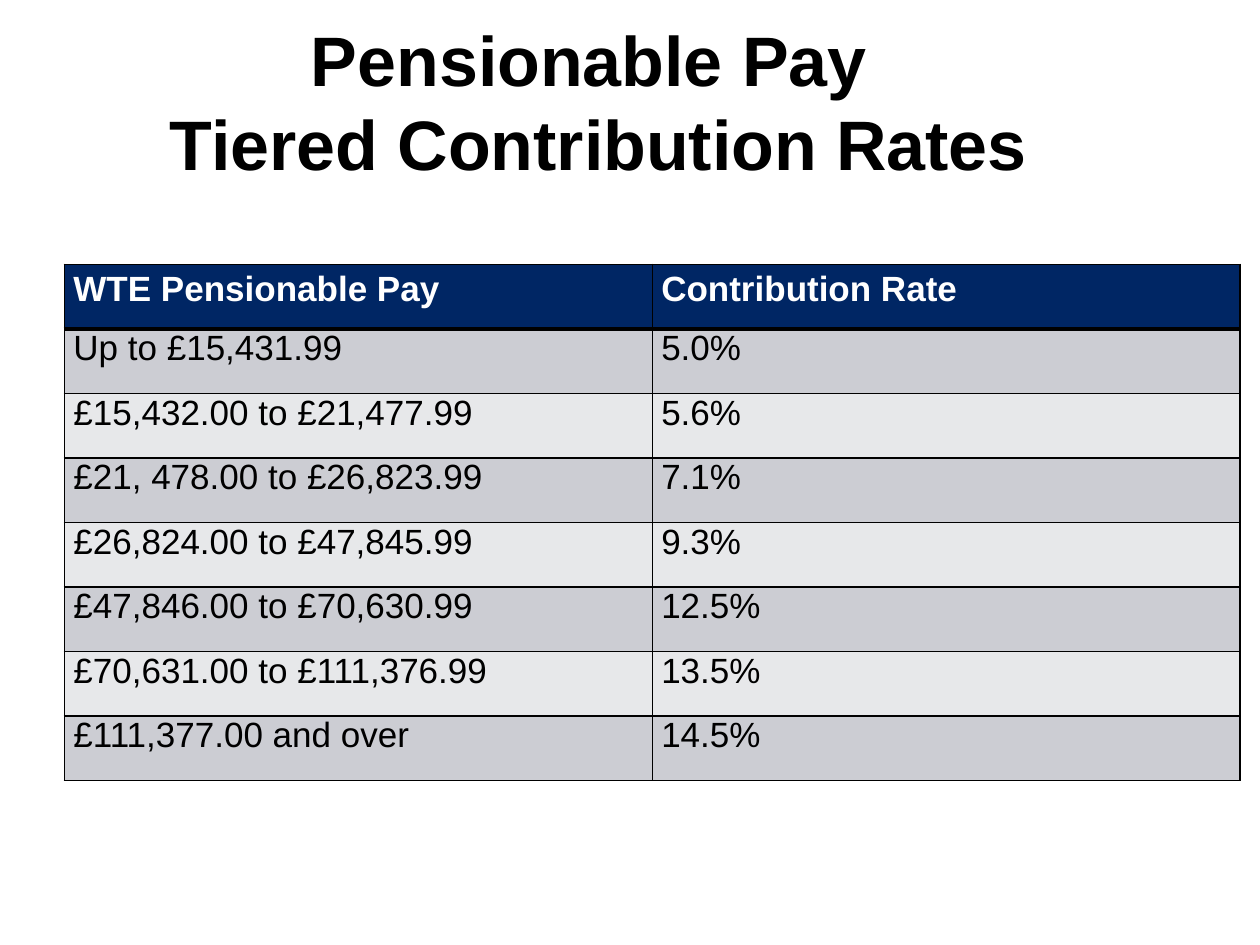
from dataclasses import dataclass

from lxml.etree import SubElement
from pptx import Presentation
from pptx.dml.color import RGBColor
from pptx.enum.text import MSO_ANCHOR, MSO_AUTO_SIZE, PP_ALIGN
from pptx.oxml.ns import qn
from pptx.util import Cm, Pt


@dataclass(frozen=True)
class Theme:
    font: str = "Arial"
    ink: str = "000000"
    white: str = "FFFFFF"
    head: str = "002664"
    bands: tuple = ("CCCDD3", "E7E8EA")
    title: int = 40
    body: int = 20


ROWS = [
    ("WTE Pensionable Pay", "Contribution Rate"),
    ("Up to £15,431.99", "5.0%"),
    ("£15,432.00 to £21,477.99", "5.6%"),
    ("£21, 478.00 to £26,823.99", "7.1%"),
    ("£26,824.00 to £47,845.99", "9.3%"),
    ("£47,846.00 to £70,630.99", "12.5%"),
    ("£70,631.00 to £111,376.99", "13.5%"),
    ("£111,377.00 and over", "14.5%"),
]


def write(frame, text, *, font, size, color, bold=False, align=PP_ALIGN.LEFT, space=None):
    para = frame.paragraphs[0]
    para.text = text
    para.alignment = align
    para.line_spacing = space
    for run in para.runs:
        run.font.name = font
        run.font.size = Pt(size)
        run.font.bold = bold
        run.font.color.rgb = RGBColor.from_string(color)


class Deck:
    def __init__(self, theme):
        self.theme = theme
        self.show = Presentation()
        self.show.slide_width = Cm(25.4)
        self.show.slide_height = Cm(19.05)
        self.slide = self.show.slides.add_slide(self.show.slide_layouts[5])

    def title(self, text, left, top, width, height):
        box = self.slide.shapes.title
        box.left, box.top = Cm(left), Cm(top)
        box.width, box.height = Cm(width), Cm(height)
        frame = box.text_frame
        frame.auto_size = MSO_AUTO_SIZE.NONE
        frame.vertical_anchor = MSO_ANCHOR.MIDDLE
        write(frame, text, font=self.theme.font, size=self.theme.title,
              color=self.theme.ink, bold=True, align=PP_ALIGN.CENTER)

    def table(self, rows, left, top, wide, high):
        count, cols = len(rows), len(rows[0])
        grid = self.slide.shapes.add_table(
            count, cols, Cm(left), Cm(top), Cm(wide * cols), Cm(high * count)).table
        for y, row in enumerate(rows):
            for x, text in enumerate(row):
                self.cell(grid.cell(y, x), text, y)

    def cell(self, cell, text, row):
        theme, head = self.theme, row == 0
        cell.margin_left = cell.margin_right = Cm(0.18)
        cell.margin_top = cell.margin_bottom = 0
        write(cell.text_frame, text, font=theme.font, size=theme.body,
              color=theme.white if head else theme.ink, bold=head,
              space=1.15 if head else None)
        self.edge(cell, top=3 if row == 1 else 1, bottom=3 if head else 1)
        cell.fill.solid()
        fill = theme.head if head else theme.bands[(row - 1) % 2]
        cell.fill.fore_color.rgb = RGBColor.from_string(fill)

    def edge(self, cell, top, bottom):
        props = cell._tc.get_or_add_tcPr()
        for side, size in (("L", 1), ("R", 1), ("T", top), ("B", bottom)):
            line = SubElement(props, qn(f"a:ln{side}"), w=str(Pt(size)))
            fill = SubElement(line, qn("a:solidFill"))
            SubElement(fill, qn("a:srgbClr"), val=self.theme.ink)


def main():
    deck = Deck(Theme())
    deck.title("Pensionable Pay \vTiered Contribution Rates", 1.27, 0.43, 21.59, 3.18)
    deck.table(ROWS, 1.3, 5.33, 11.85, 1.3)
    deck.show.save("out.pptx")


if __name__ == "__main__":
    main()
